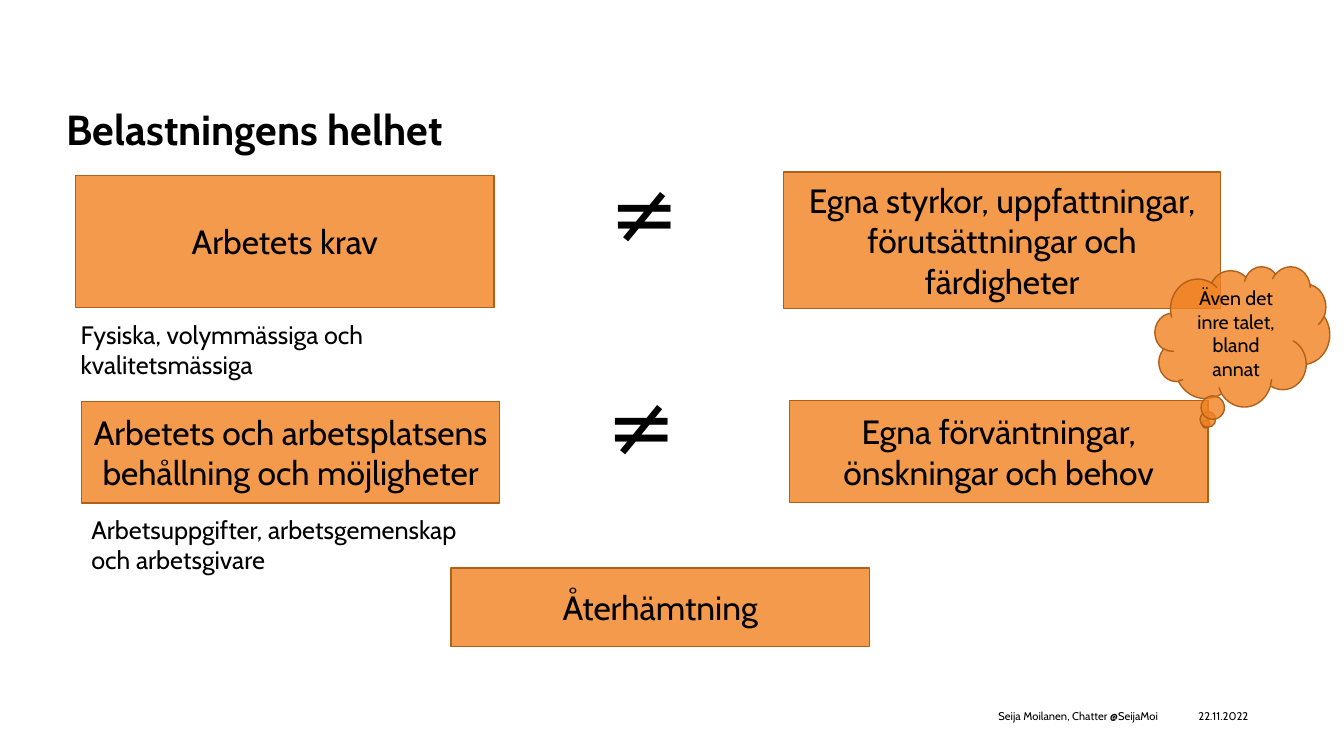
"""Build a slide on the whole of work load, with demands set against own strengths."""
import pptx
import pptx.util
import pptx.dml.color
import pptx.enum.shapes
import pptx.enum.text
import pptx.oxml.ns
from lxml import etree

HUES = {"ink": "000000", "fill": "F18121", "line": "B25F18"}
ALIGN = pptx.enum.text.PP_ALIGN
ANCHOR = pptx.enum.text.MSO_ANCHOR
SHAPE = pptx.enum.shapes.MSO_SHAPE


class Deck:
    """Hold the style and the current slide, on a grid of 160 columns by 90 rows."""

    font = "Cabin"
    cols, rows = 160, 90

    def __init__(self):
        self.prs = pptx.Presentation()
        self.prs.slide_width = pptx.util.Inches(13.33)
        self.prs.slide_height = pptx.util.Inches(7.5)
        self.slide = self.prs.slides.add_slide(self.prs.slide_layouts[5])

    def spot(self, left, top, width, height):
        across = self.prs.slide_width / self.cols
        down = self.prs.slide_height / self.rows
        return [round(n) for n in (left * across, top * down, width * across, height * down)]

    def hue(self, name):
        return pptx.dml.color.RGBColor.from_string(HUES[name])

    def put(self, frame, lines, size, align, anchor, inset=True, bold=False):
        frame.word_wrap = True
        frame.auto_size = pptx.enum.text.MSO_AUTO_SIZE.NONE
        frame.vertical_anchor = anchor
        if not inset:
            frame.margin_left = frame.margin_right = 0
            frame.margin_top = frame.margin_bottom = 0
        for i, line in enumerate(lines):
            para = frame.add_paragraph() if i else frame.paragraphs[0]
            para.alignment = align
            run = para.add_run()
            run.text = line
            run.font.name = self.font
            run.font.size = pptx.util.Pt(size)
            run.font.bold = bold
            run.font.color.rgb = self.hue("ink")

    def title(self, text, *cells):
        head = self.slide.shapes.title
        head.left, head.top, head.width, head.height = self.spot(*cells)
        self.put(head.text_frame, [text], 30, ALIGN.LEFT, ANCHOR.BOTTOM, False, True)

    def label(self, text, size, *cells):
        box = self.slide.shapes.add_textbox(*self.spot(*cells))
        self.put(box.text_frame, [text], size, ALIGN.LEFT, ANCHOR.TOP)

    def foot(self, text, align, left, width):
        box = self.slide.shapes.add_textbox(*self.spot(left, 84, width, 2.4))
        self.put(box.text_frame, [text], 8, align, ANCHOR.MIDDLE, False)

    def block(self, lines, *cells, kind=SHAPE.RECTANGLE, size=24):
        shape = self.slide.shapes.add_shape(kind, *self.spot(*cells))
        shape.shadow.inherit = False
        shape.fill.solid()
        shape.fill.fore_color.rgb = self.hue("fill")
        tint = shape.element.spPr.find(".//" + pptx.oxml.ns.qn("a:srgbClr"))
        etree.SubElement(tint, pptx.oxml.ns.qn("a:alpha"), val="80000")
        shape.line.color.rgb = self.hue("line")
        shape.line.width = pptx.util.Pt(1)
        self.put(shape.text_frame, lines, size, ALIGN.CENTER, ANCHOR.MIDDLE)


def main():
    deck = Deck()
    wide = 49.8
    deck.title("Belastningens helhet", 7.9, 6.2, 129.6, 12.1)
    deck.foot("Seija Moilanen, Chatter @SeijaMoi", ALIGN.RIGHT, 83.9, 54)
    deck.block(["Arbetets krav"], 9, 20.9, wide, 15.7)
    deck.block(["Arbetets och arbetsplatsens", "behållning och möjligheter"],
               9.7, 47.8, wide, 12.1)
    deck.block(["Egna förväntningar,", "önskningar och behov"], 94, 47.7, wide, 12.1)
    deck.block(["Egna styrkor, uppfattningar, förutsättningar och färdigheter"],
               93.3, 20.5, 52, 16.2)
    deck.label("Arbetsuppgifter, arbetsgemenskap och arbetsgivare", 18, 9.7, 60.6, 48.7, 8)
    for left, top in ((71.4, 18.4), (71, 43.8)):
        deck.label("≠", 60, left, top, 10, 13.3)
    deck.label("Fysiska, volymmässiga och kvalitetsmässiga", 18, 8.4, 37.4, 45.2, 8)
    deck.block(["Återhämtning"], 53.7, 67.6, wide, 9.4)
    deck.block(["Även det inre talet, bland annat"], 137.5, 31.7, 20.8, 16.7,
               kind=SHAPE.CLOUD_CALLOUT, size=14)
    deck.foot("22.11.2022", ALIGN.CENTER, 140.2, 10.9)
    deck.prs.save("out.pptx")


if __name__ == "__main__":
    main()
